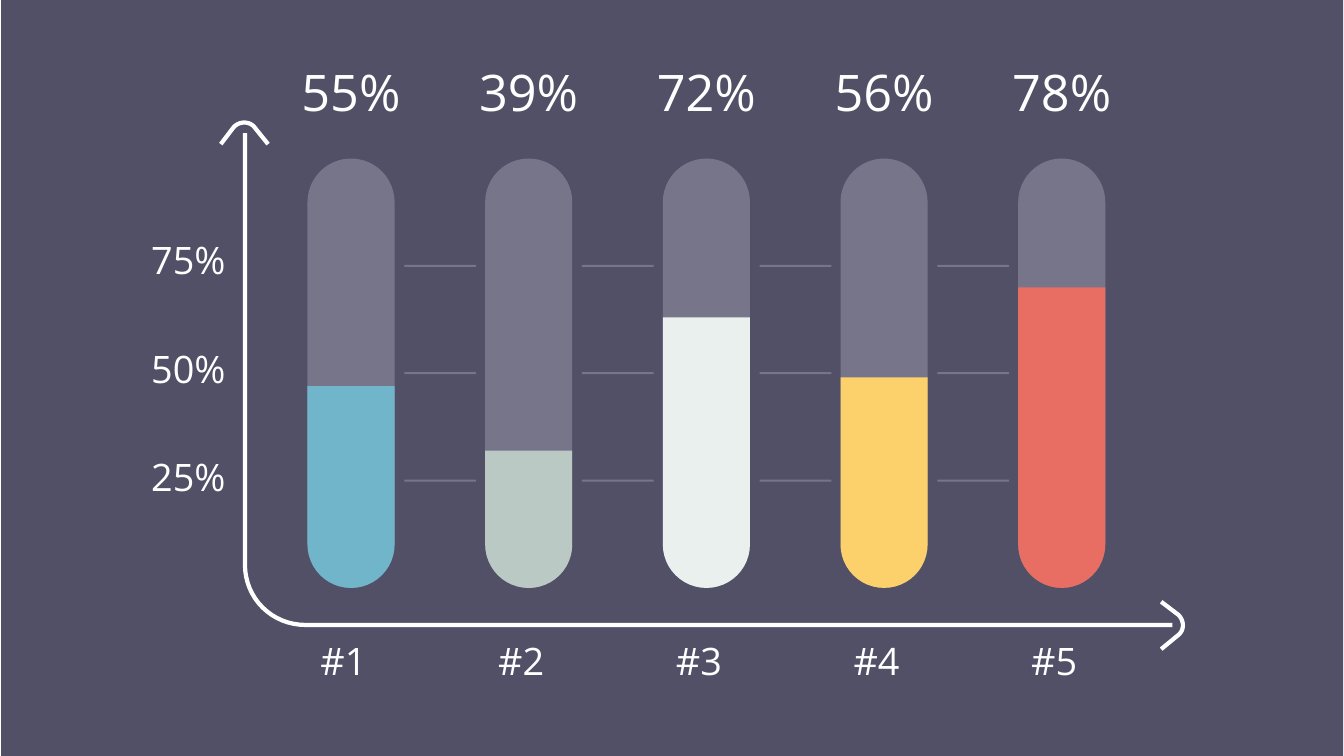
import dataclasses

import pptx
import pptx.dml.color
import pptx.enum.shapes
import pptx.util

SHAPES = pptx.enum.shapes.MSO_SHAPE
SLIDE_WIDTH = pptx.util.Inches(13.33)
SLIDE_HEIGHT = pptx.util.Inches(7.5)
CURVE_STEPS = 16

# Positions and sizes below are percentages of the slide's width and height.
BAR_LEFT, BAR_TOP = 22.88, 20.97
BAR_WIDTH, BAR_HEIGHT = 6.48, 56.8
BAR_PITCH = 13.22
QUARTER = BAR_HEIGHT / 4
TICK_OFFSET, TICK_WIDTH, TICK_HEIGHT = 7.2, 5.33, 0.27
SCALE_LABEL_TOP, SCALE_LABEL_PITCH = 31.33, 14.33

Point = tuple[float, float]


@dataclasses.dataclass(frozen=True)
class Theme:
    background: str = "525067"
    track: str = "77758A"
    ink: str = "FFFFFF"
    font: str = "Open Sans"
    value_size: int = 36
    label_size: int = 27
    line_width: int = 3


@dataclasses.dataclass(frozen=True)
class Area:
    left: float
    top: float
    width: float
    height: float

    def lengths(self) -> tuple[int, int, int, int]:
        """The area in slide units."""
        return (across(self.left), down(self.top),
                across(self.width), down(self.height))


@dataclasses.dataclass(frozen=True)
class Bar:
    name: str
    value: str
    filled: float  # share of the track's height
    color: str


@dataclasses.dataclass(frozen=True)
class Stroke:
    """A straight run, a cubic curve and another straight run."""
    start: Point
    curve: tuple[Point, Point, Point, Point]
    end: Point


THEME = Theme()
BARS = [
    Bar("#1", "55%", 0.47, "71B5CB"),
    Bar("#2", "39%", 0.32, "BAC9C4"),
    Bar("#3", "72%", 0.63, "E9F0ED"),
    Bar("#4", "56%", 0.49, "FCD06A"),
    Bar("#5", "78%", 0.7, "E86D63"),
]
SCALE = ["75%", "50%", "25%"]
AXIS = Stroke((18.23, 17.6),
              ((18.23, 74.67), (18.23, 79.2), (20.25, 82.67), (22.73, 82.67)),
              (87.23, 82.67))
UP_HEAD = Stroke((16.43, 19.07),
                 ((17.4, 16.8), (17.85, 16), (18.6, 16), (18.98, 16.93)),
                 (19.95, 19.07))
RIGHT_HEAD = Stroke((86.4, 79.6),
                    ((87.68, 81.33), (88.13, 82.13), (88.13, 83.33), (87.68, 84)),
                    (86.4, 85.87))


def across(percent: float) -> int:
    return round(SLIDE_WIDTH * percent / 100)


def down(percent: float) -> int:
    return round(SLIDE_HEIGHT * percent / 100)


def color_of(code: str) -> pptx.dml.color.RGBColor:
    return pptx.dml.color.RGBColor.from_string(code)


def add_filled(page, kind, area: Area, color: str, corners: tuple = ()) -> None:
    shape = page.shapes.add_shape(kind, *area.lengths())
    for index, corner in enumerate(corners):
        shape.adjustments[index] = corner
    shape.fill.solid()
    shape.fill.fore_color.rgb = color_of(color)
    shape.line.fill.background()
    shape.shadow.inherit = False


def add_label(page, text: str, area: Area, size: int) -> None:
    frame = page.shapes.add_textbox(*area.lengths()).text_frame
    frame_format = {"word_wrap": True, "margin_left": 0, "margin_top": 0,
                    "margin_right": 0, "margin_bottom": 0}
    for name, setting in frame_format.items():
        setattr(frame, name, setting)
    span = frame.paragraphs[0].add_run()
    span.text = text
    for name, setting in {"name": THEME.font, "size": pptx.util.Pt(size)}.items():
        setattr(span.font, name, setting)
    span.font.color.rgb = color_of(THEME.ink)


def curve_point(curve: tuple[Point, Point, Point, Point], share: float) -> Point:
    rest = 1 - share
    weights = (rest**3, 3 * rest**2 * share, 3 * rest * share**2, share**3)
    x, y = (sum(weight * point[axis] for weight, point in zip(weights, curve))
            for axis in (0, 1))
    return x, y


def add_stroke(page, stroke: Stroke) -> None:
    points = [curve_point(stroke.curve, step / CURVE_STEPS)
              for step in range(CURVE_STEPS + 1)] + [stroke.end]
    builder = page.shapes.build_freeform(across(stroke.start[0]), down(stroke.start[1]))
    builder.add_line_segments([(across(x), down(y)) for x, y in points], close=False)
    shape = builder.convert_to_shape()
    shape.fill.background()
    shape.line.color.rgb = color_of(THEME.ink)
    shape.line.width = pptx.util.Pt(THEME.line_width)
    shape.shadow.inherit = False


def add_ticks(page, bar_left: float) -> None:
    """Draws the scale marks in the gap to the right of a bar."""
    for row in range(1, len(SCALE) + 1):
        top = BAR_TOP + row * QUARTER - TICK_HEIGHT / 2
        area = Area(bar_left + TICK_OFFSET, top, TICK_WIDTH, TICK_HEIGHT)
        add_filled(page, SHAPES.RECTANGLE, area, THEME.track)


def add_bar(page, bar: Bar, left: float) -> None:
    track = Area(left, BAR_TOP, BAR_WIDTH, BAR_HEIGHT)
    height = BAR_HEIGHT * bar.filled
    level = Area(left, BAR_TOP + BAR_HEIGHT - height, BAR_WIDTH, height)
    add_filled(page, SHAPES.ROUNDED_RECTANGLE, track, THEME.track, (0.5,))
    add_filled(page, SHAPES.ROUND_2_SAME_RECTANGLE, level, bar.color, (0, 0.5))
    add_label(page, bar.name, Area(left + 0.97, 84.4, 3.9, 6), THEME.label_size)
    add_label(page, bar.value, Area(left - 0.45, 8.13, 9.53, 10.93), THEME.value_size)


def main() -> None:
    deck = pptx.Presentation()
    deck.slide_width, deck.slide_height = SLIDE_WIDTH, SLIDE_HEIGHT
    page = deck.slides.add_slide(deck.slide_layouts[6])
    add_filled(page, SHAPES.RECTANGLE, Area(0.08, 0, 99.86, 100), THEME.background)
    for column, bar in enumerate(BARS):
        left = BAR_LEFT + column * BAR_PITCH
        if column < len(BARS) - 1:
            add_ticks(page, left)
        add_bar(page, bar, left)
    for stroke in (AXIS, UP_HEAD, RIGHT_HEAD):
        add_stroke(page, stroke)
    for row, text in enumerate(SCALE):
        top = SCALE_LABEL_TOP + row * SCALE_LABEL_PITCH
        add_label(page, text, Area(11.25, top, 7.2, 8.13), THEME.label_size)
    deck.save("out.pptx")


if __name__ == "__main__":
    main()
